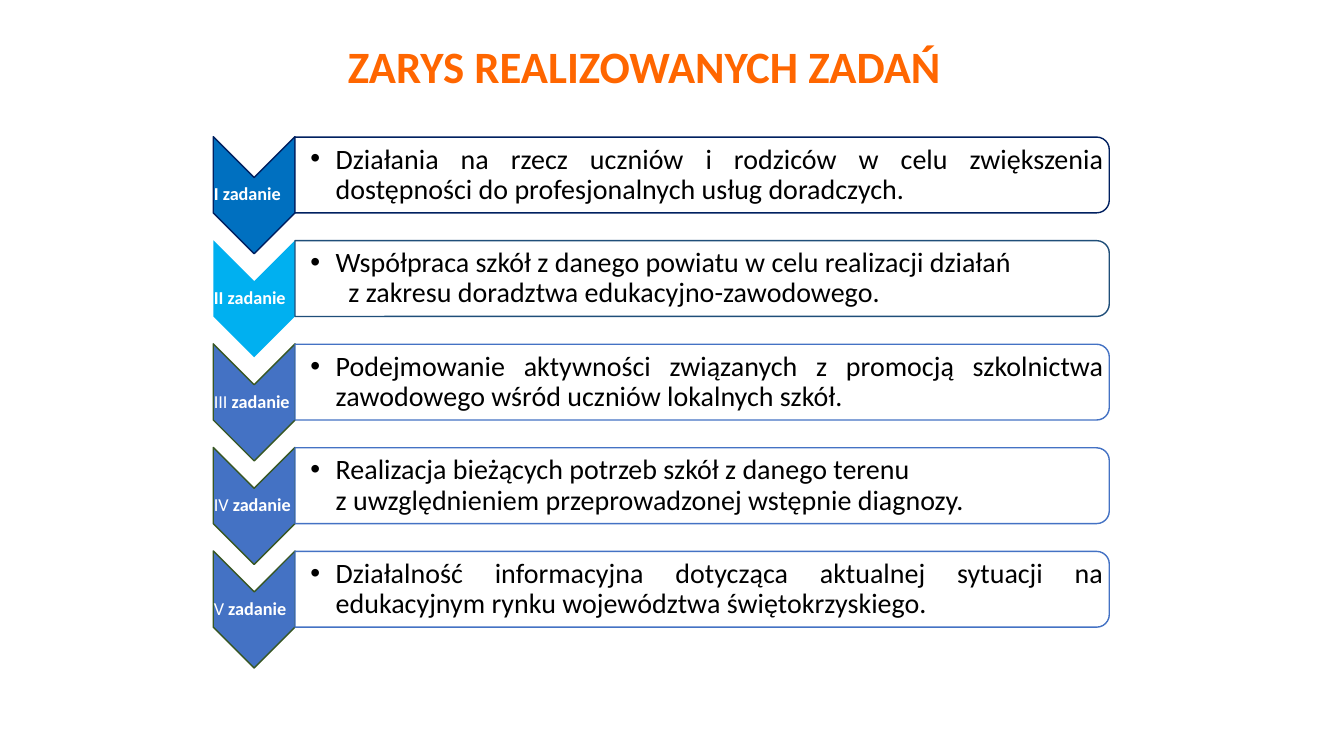
"""Build a slide outlining five tasks as chevrons with description panels."""
from dataclasses import dataclass
from typing import Optional

from lxml.etree import SubElement
from pptx import Presentation
from pptx.dml.color import RGBColor
from pptx.enum.shapes import MSO_SHAPE
from pptx.enum.text import MSO_ANCHOR, PP_ALIGN
from pptx.oxml.ns import qn
from pptx.util import Cm, Pt

COLORS = {
    "orange": "FF6600",
    "white": "FFFFFF",
    "black": "000000",
    "navy": "002060",
    "blue": "0070C0",
    "sky": "00B0F0",
    "steel": "1F4E79",
    "indigo": "4472C4",
    "green": "385723",
}
TASK_PITCH = 2.61
TEXT_INDENT = 0.64
PANEL_OPACITY = 90


@dataclass
class Task:
    numeral: str
    lines: tuple[str, ...]
    fill: str = "indigo"
    outline: Optional[str] = "green"
    panel_outline: str = "indigo"
    bold_numeral: bool = False
    continuation_indent: float = TEXT_INDENT


TASKS = (
    Task("I", ("Działania na rzecz uczniów i rodziców w celu zwiększenia "
               "dostępności do profesjonalnych usług doradczych.",),
         "blue", "navy", "navy", True),
    Task("II", ("Współpraca szkół z danego powiatu w celu realizacji działań",
                "z zakresu doradztwa edukacyjno-zawodowego."),
         "sky", None, "steel", True, 0.96),
    Task("III", ("Podejmowanie aktywności związanych z promocją szkolnictwa "
                 "zawodowego wśród uczniów lokalnych szkół.",)),
    Task("IV", ("Realizacja bieżących potrzeb szkół z danego terenu",
                "z uwzględnieniem przeprowadzonej wstępnie diagnozy.")),
    Task("V", ("Działalność informacyjna dotycząca aktualnej sytuacji na "
               "edukacyjnym rynku województwa świętokrzyskiego.",)),
)


def color(name: str) -> RGBColor:
    return RGBColor.from_string(COLORS[name])


def add_rotated_shape(slide, kind, box: tuple, fill: str, outline: Optional[str]):
    shape = slide.shapes.add_shape(kind, *map(Cm, box))
    shape.rotation = 90
    shape.shadow.inherit = False
    shape.fill.solid()
    shape.fill.fore_color.rgb = color(fill)
    if outline:
        shape.line.color.rgb = color(outline)
        shape.line.width = Pt(1)
    else:
        shape.line.fill.background()
    return shape


def add_text_frame(slide, box: tuple, left_inset: float = 0.03, inset: float = 0.03):
    frame = slide.shapes.add_textbox(*map(Cm, box)).text_frame
    settings = {
        "word_wrap": True,
        "vertical_anchor": MSO_ANCHOR.MIDDLE,
        "margin_left": Cm(left_inset),
        "margin_right": Cm(inset),
        "margin_top": Cm(inset),
        "margin_bottom": Cm(inset),
    }
    for name, value in settings.items():
        setattr(frame, name, value)
    return frame


def format_paragraph(paragraph, alignment) -> None:
    settings = {"alignment": alignment, "line_spacing": 0.9, "space_after": Pt(0)}
    for name, value in settings.items():
        setattr(paragraph, name, value)


def add_run(paragraph, text: str, size: float, color_name: str, bold: bool = False) -> None:
    run = paragraph.add_run()
    run.text = text
    settings = {"name": "Calibri", "size": Pt(size), "bold": bold}
    for name, value in settings.items():
        setattr(run.font, name, value)
    run.font.color.rgb = color(color_name)


def set_indent(paragraph, margin: float, bulleted: bool) -> None:
    properties = paragraph._p.get_or_add_pPr()
    properties.set("marL", str(Cm(margin)))
    properties.set("indent", str(-Cm(margin) if bulleted else 0))
    if bulleted:
        SubElement(properties, qn("a:buFont")).set("typeface", "Arial")
        SubElement(properties, qn("a:buChar")).set("char", "•")
    else:
        SubElement(properties, qn("a:buNone"))


def add_title(slide, text: str) -> None:
    frame = add_text_frame(slide, (5.23, 0.89, 21.9, 1.7), 0.25, 0.13)
    paragraph = frame.paragraphs[0]
    format_paragraph(paragraph, PP_ALIGN.CENTER)
    add_run(paragraph, text, 32, "orange", True)


def add_label(slide, task: Task, offset: float) -> None:
    frame = add_text_frame(slide, (5.36, 4.47 + offset, 2.06, 0.89))
    paragraph = frame.paragraphs[0]
    format_paragraph(paragraph, PP_ALIGN.JUSTIFY)
    add_run(paragraph, f"{task.numeral} ", 13, "white", task.bold_numeral)
    add_run(paragraph, "zadanie", 13, "white", True)


def add_description(slide, task: Task, offset: float) -> None:
    frame = add_text_frame(slide, (7.42, 3.55 + offset, 20.42, 1.73), 0.4)
    alignment = PP_ALIGN.JUSTIFY if len(task.lines) == 1 else PP_ALIGN.LEFT
    for index, line in enumerate(task.lines):
        first = index == 0
        paragraph = frame.paragraphs[0] if first else frame.add_paragraph()
        format_paragraph(paragraph, alignment)
        set_indent(paragraph, TEXT_INDENT if first else task.continuation_indent, first)
        add_run(paragraph, line, 20, "black")


def add_task(slide, task: Task, offset: float) -> None:
    add_rotated_shape(slide, MSO_SHAPE.CHEVRON, (4.93, 3.89 + offset, 2.95, 2.06),
                      task.fill, task.outline)
    add_label(slide, task, offset)
    panel = add_rotated_shape(slide, MSO_SHAPE.ROUND_2_SAME_RECTANGLE,
                              (16.74, -5.85 + offset, 1.91, 20.52),
                              "white", task.panel_outline)
    fill_color = panel._element.spPr.find(f"{qn('a:solidFill')}/{qn('a:srgbClr')}")
    SubElement(fill_color, qn("a:alpha")).set("val", str(PANEL_OPACITY * 1000))
    add_description(slide, task, offset)


def main() -> None:
    presentation = Presentation()
    presentation.slide_width = Cm(33.87)
    presentation.slide_height = Cm(19.05)
    slide = presentation.slides.add_slide(presentation.slide_layouts[6])
    for index, task in enumerate(TASKS):
        add_task(slide, task, index * TASK_PITCH)
    add_title(slide, "ZARYS REALIZOWANYCH ZADAŃ")
    presentation.save("out.pptx")


if __name__ == "__main__":
    main()
